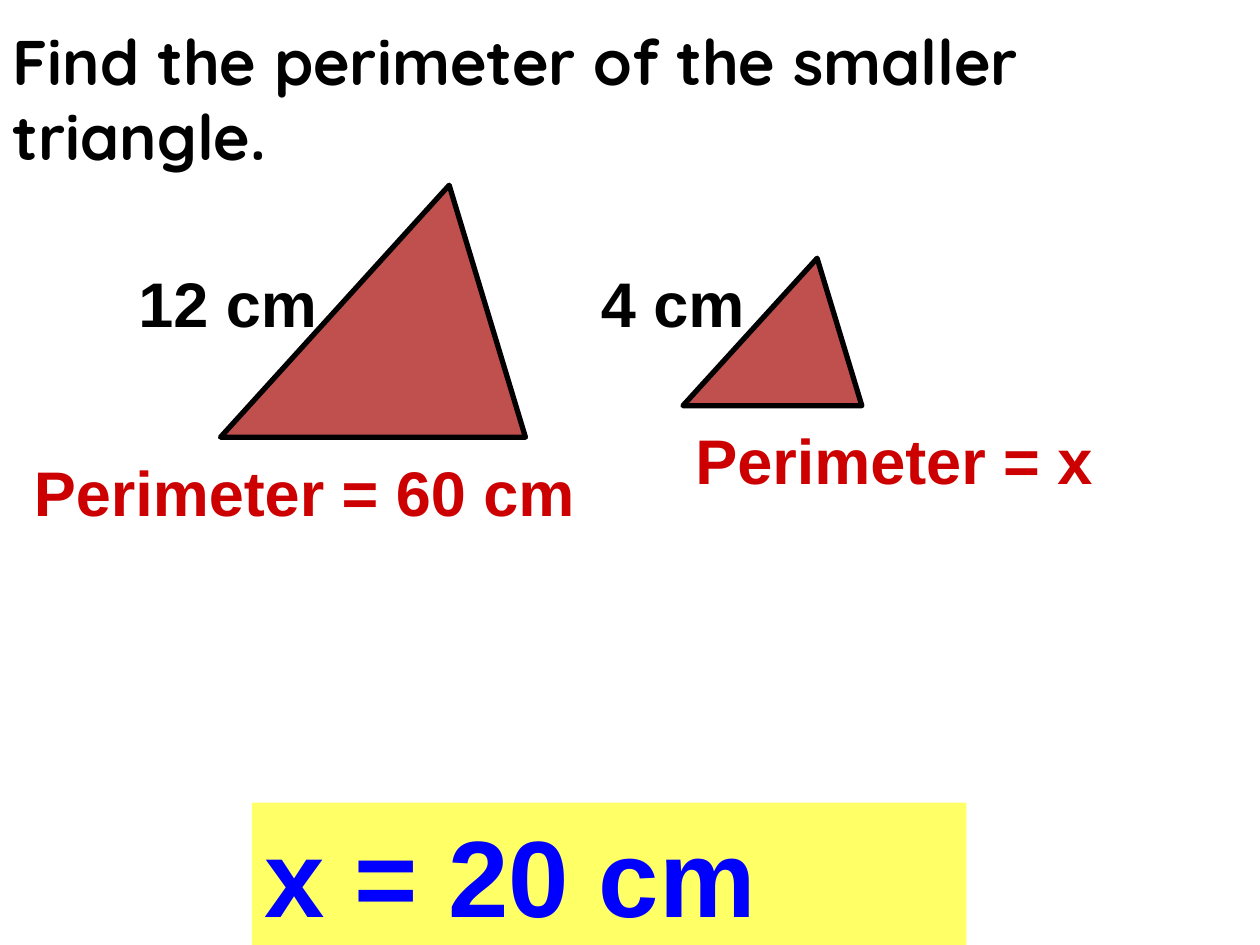
from lxml import etree
from pptx import Presentation
from pptx.dml.color import RGBColor
from pptx.enum.shapes import MSO_SHAPE as SHAPE
from pptx.enum.text import MSO_ANCHOR as ANCHOR, MSO_AUTO_SIZE as AUTO, PP_ALIGN as ALIGN
from pptx.oxml.ns import qn
from pptx.util import Inches, Pt


def rgb(value):
    return RGBColor.from_string(value)


def write(sp, text, size, color, font="Arial"):
    tf = sp.text_frame
    tf.text = text
    tf.word_wrap = True
    p = tf.paragraphs[0]
    p.alignment = ALIGN.LEFT
    f = p.runs[0].font
    f.name, f.size, f.bold = font, Pt(size), True
    f.color.rgb = rgb(color)
    return tf


prs = Presentation()
prs.slide_width, prs.slide_height = Inches(10), Inches(7.5)
s = prs.slides.add_slide(prs.slide_layouts[5])

title = s.shapes.title
title.left, title.top = Inches(0), Inches(0)
title.width, title.height = Inches(10), Inches(1.55)
tf = write(title, "Find the perimeter of the smaller triangle.", 36, "000000", "Quicksand")
tf.vertical_anchor = ANCHOR.MIDDLE
tf.auto_size = AUTO.NONE

for x, y, w, h in [(5.42, 2.05, 1.42, 1.17), (1.75, 1.47, 2.42, 2)]:
    sp = s.shapes.add_shape(SHAPE.ISOSCELES_TRIANGLE, Inches(x), Inches(y), Inches(w), Inches(h))
    sp.adjustments[0] = 0.75
    sp.shadow.inherit = False
    sp.fill.solid()
    sp.fill.fore_color.rgb = rgb("C0504D")
    sp.line.color.rgb = rgb("000000")
    sp.line.width = Pt(3)

labels = [
    ("12 cm", 1, 2.05, 1.71, 0.7, 36, "000000", None),
    ("4 cm", 4.67, 2.05, 1.58, 0.7, 36, "000000", None),
    ("Perimeter = 60 cm", 0.17, 3.55, 4.75, 0.7, 36, "CC0000", None),
    ("Perimeter = x", 5.42, 3.3, 4.42, 0.7, 36, "CC0000", None),
    ("x = 20 cm", 2, 6.37, 5.67, 1.13, 62, "0000FF", "FFFF66"),
]
for text, x, y, w, h, size, color, fill in labels:
    sp = s.shapes.add_textbox(Inches(x), Inches(y), Inches(w), Inches(h))
    tf = write(sp, text, size, color)
    tf.auto_size = AUTO.SHAPE_TO_FIT_TEXT
    before = etree.SubElement(tf.paragraphs[0]._p.get_or_add_pPr(), qn("a:spcBef"))
    etree.SubElement(before, qn("a:spcPct")).set("val", "50000")
    if fill:
        sp.fill.solid()
        sp.fill.fore_color.rgb = rgb(fill)

prs.save("out.pptx")
